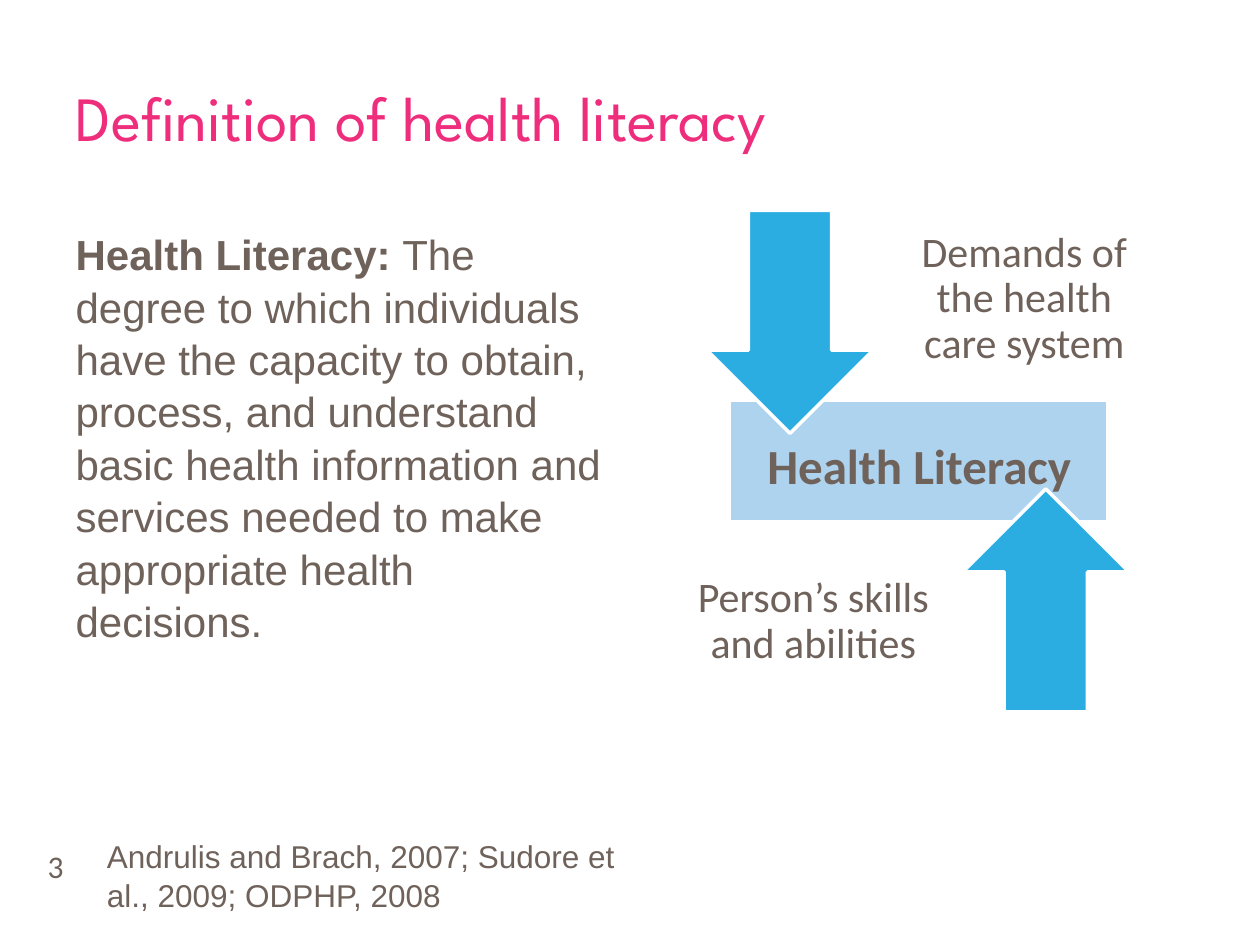
import pptx
import pptx.util
import pptx.dml.color
import pptx.enum.shapes
import pptx.enum.text
from lxml import etree

PINK = pptx.dml.color.RGBColor(0xEE, 0x2E, 0x7C)
BROWN = pptx.dml.color.RGBColor(0x6F, 0x62, 0x5A)
BLUE = pptx.dml.color.RGBColor(0x2B, 0xAD, 0xE2)
PALE_BLUE = pptx.dml.color.RGBColor(0xAD, 0xD3, 0xEE)
WHITE = pptx.dml.color.RGBColor(0xFF, 0xFF, 0xFF)
SHAPES = pptx.enum.shapes.MSO_SHAPE
ANCHOR = pptx.enum.text.MSO_ANCHOR
ALIGN = pptx.enum.text.PP_ALIGN
WIDTH, HEIGHT = 10, 7.5
MARGIN = 0.05 * WIDTH
ARROW = (1.32, 1.77)


def inches(*lengths):
    return [pptx.util.Inches(length) for length in lengths]


def place(shape, left, top, width, height):
    shape.left, shape.top, shape.width, shape.height = inches(left, top, width, height)


def write(shape, *spans, font="Calibri", size=24, color=BROWN, bold=False,
          align=ALIGN.LEFT, anchor=ANCHOR.TOP, spacing=1.0, inset=None):
    frame = shape.text_frame
    frame.word_wrap = True
    frame.vertical_anchor = anchor
    if inset is not None:
        frame.margin_left, frame.margin_top, frame.margin_right, frame.margin_bottom = inches(*[inset] * 4)
    para = frame.paragraphs[0]
    para.alignment = align
    para.line_spacing = spacing
    para.space_before = pptx.util.Pt(0)
    for position, text in enumerate(spans):
        span = para.add_run()
        span.text = text
        span.font.name = font
        span.font.size = pptx.util.Pt(size)
        span.font.color.rgb = color
        span.font.bold = bold and position == 0
    return para


def remove_bullet(para):
    properties = para._p.get_or_add_pPr()
    properties.set("marL", "0")
    properties.set("indent", "0")
    etree.SubElement(properties, pptx.oxml.ns.qn("a:buNone"))


def add_text(page, at, text, **style):
    box = page.shapes.add_textbox(*inches(*at))
    write(box, text, **style)


def add_figure(page, kind, at, fill=None):
    figure = page.shapes.add_shape(kind, *inches(*at))
    figure.shadow.inherit = False
    if fill is None:
        figure.fill.background()
        figure.line.fill.background()
    else:
        figure.fill.solid()
        figure.fill.fore_color.rgb = fill
        figure.line.color.rgb = WHITE
        figure.line.width = pptx.util.Pt(2)
    return figure


def add_balance(page):
    label = dict(align=ALIGN.CENTER, anchor=ANCHOR.MIDDLE, spacing=0.9, inset=0.19)
    add_figure(page, SHAPES.MATH_MINUS, (5.25, 1.62, 4.08, 4.08), PALE_BLUE)
    add_figure(page, SHAPES.DOWN_ARROW, (5.61, 1.67, *ARROW), BLUE)
    add_text(page, (7.01, 1.45, 2.24, 1.85), "Demands of the health care system", **label)
    add_figure(page, SHAPES.UP_ARROW, (7.64, 3.88, *ARROW), BLUE)
    add_text(page, (5.24, 4.01, 2.43, 1.85), "Person’s skills and abilities", **label)
    add_text(page, (5.92, 3.41, 2.75, 0.57), "Health Literacy", size=28, bold=True, align=ALIGN.CENTER)


def main():
    deck = pptx.Presentation()
    deck.slide_width, deck.slide_height = inches(WIDTH, HEIGHT)
    page = deck.slides.add_slide(deck.slide_layouts[1])
    title, body = page.placeholders
    place(title, MARGIN, 0.04 * HEIGHT, WIDTH - 2 * MARGIN, HEIGHT / 6)
    write(title, "Definition of health literacy", font="League Spartan", size=36, color=PINK,
          anchor=ANCHOR.MIDDLE)
    place(body, MARGIN, 1.75, 4.42, 4.42)
    definition = write(
        body, "Health Literacy: ",
        "The degree to which individuals have the capacity to obtain, process, and understand "
        "basic health information and services needed to make appropriate health decisions.",
        font="Arial", bold=True, spacing=1.04)
    remove_bullet(definition)
    add_balance(page)
    number = add_figure(page, SHAPES.OVAL, (0.17, 6.59, 0.75, 0.55))
    write(number, "3", size=18)
    add_text(page, (0.75, 6.58, 4.49, 0.71),
             "Andrulis and Brach, 2007; Sudore et al., 2009; ODPHP, 2008",
             font="Arial", size=18, spacing=1.04)
    deck.save("out.pptx")


if __name__ == "__main__":
    main()
